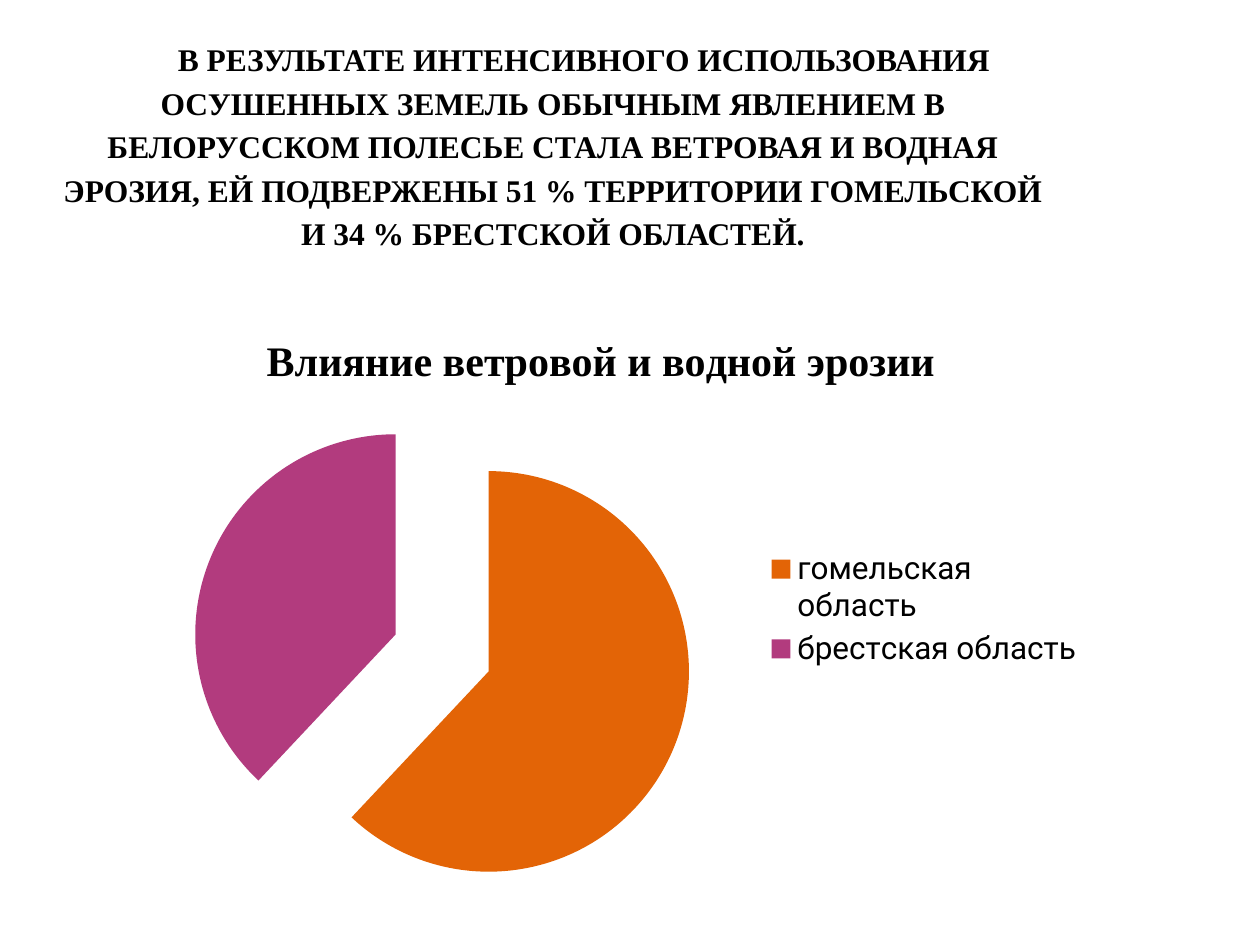
from lxml.etree import SubElement
from pptx import Presentation
from pptx.chart.data import CategoryChartData
from pptx.dml.color import RGBColor
from pptx.enum.chart import XL_CHART_TYPE, XL_LEGEND_POSITION
from pptx.enum.text import MSO_ANCHOR, MSO_AUTO_SIZE, PP_ALIGN
from pptx.oxml.ns import qn
from pptx.util import Emu, Pt

HEADING = (
    "В РЕЗУЛЬТАТЕ ИНТЕНСИВНОГО ИСПОЛЬЗОВАНИЯ ОСУШЕННЫХ ЗЕМЕЛЬ ОБЫЧНЫМ "
    "ЯВЛЕНИЕМ В БЕЛОРУССКОМ ПОЛЕСЬЕ СТАЛА ВЕТРОВАЯ И ВОДНАЯ ЭРОЗИЯ, "
    "ЕЙ ПОДВЕРЖЕНЫ 51 % ТЕРРИТОРИИ ГОМЕЛЬСКОЙ И 34 % БРЕСТСКОЙ ОБЛАСТЕЙ."
)
CHART_TITLE = "Влияние ветровой и водной эрозии"
REGIONS = [
    ("гомельская область", 62, "E36406"),
    ("брестская область", 38, "B23B7E"),
]
SERIF, SANS = "Times New Roman", "Roboto"


def px(length):
    return Emu(round(length * 914400 / 126))


def color(value):
    return RGBColor.from_string(value)


def style_font(font, name, size, bold=False):
    font.name = name
    font.size = Pt(size)
    font.bold = bold
    font.color.rgb = color("000000")


def write_text(frame, text, name=SERIF, size=18, bold=True, spacing=None, indent=0):
    paragraph = frame.paragraphs[0]
    paragraph.alignment = PP_ALIGN.CENTER
    paragraph.line_spacing = spacing
    if indent:
        properties = paragraph._p.get_or_add_pPr()
        properties.set("marL", "0")
        properties.set("indent", str(px(indent)))
    run = paragraph.add_run()
    run.text = text
    style_font(run.font, name, size, bold)


def set_layout(parent, position, **fractions):
    """Place a chart part by fractions of the chart's own box."""
    for old in parent.findall(qn("c:layout")):
        parent.remove(old)
    layout = SubElement(parent, qn("c:layout"))
    parent.insert(position, layout)
    manual = SubElement(layout, qn("c:manualLayout"))
    if "w" in fractions:
        SubElement(manual, qn("c:layoutTarget")).set("val", "inner")
    for axis in "xy":
        SubElement(manual, qn(f"c:{axis}Mode")).set("val", "edge")
    for key, value in fractions.items():
        SubElement(manual, qn(f"c:{key}")).set("val", str(value))


def add_heading(slide, left, top, width, height):
    heading = slide.shapes.title
    heading.left, heading.top = px(left), px(top)
    heading.width, heading.height = px(width), px(height)
    frame = heading.text_frame
    frame.word_wrap = True
    frame.auto_size = MSO_AUTO_SIZE.NONE
    frame.vertical_anchor = MSO_ANCHOR.BOTTOM
    frame.margin_left = frame.margin_right = px(6)
    frame.margin_top, frame.margin_bottom = 0, px(71)
    write_text(frame, HEADING, spacing=1.15, indent=62)


def add_erosion_pie(slide, left, top, width, height):
    data = CategoryChartData()
    data.categories = [region for region, _, _ in REGIONS]
    data.add_series(CHART_TITLE, [share for _, share, _ in REGIONS])
    chart = slide.shapes.add_chart(
        XL_CHART_TYPE.PIE, px(left), px(top), px(width), px(height), data
    ).chart
    style_font(chart.font, SANS, 18)

    # Chart title
    chart.has_title = True
    write_text(chart.chart_title.text_frame, CHART_TITLE, size=24)
    set_layout(chart.chart_title._element, 1, x=0.13, y=0.05)

    # Legend
    chart.has_legend = True
    chart.legend.position = XL_LEGEND_POSITION.RIGHT
    chart.legend.include_in_layout = False
    style_font(chart.legend.font, SANS, 18)

    # Slices, pulled apart
    plot = chart.plots[0]
    plot.vary_by_categories = True
    shares = plot.series[0]
    for index, (_, _, fill) in enumerate(REGIONS):
        slice_fill = shares.points[index].format.fill
        slice_fill.solid()
        slice_fill.fore_color.rgb = color(fill)
    explosion = SubElement(shares._element, qn("c:explosion"))
    explosion.set("val", "25")
    shares._element.find(qn("c:dPt")).addprevious(explosion)
    plot_area = chart._chartSpace.chart.plotArea
    set_layout(plot_area, 0, x=0.06, y=0.17, w=0.52, h=0.8)


def main():
    presentation = Presentation()
    presentation.slide_width, presentation.slide_height = px(1260), px(945)
    slide = presentation.slides.add_slide(presentation.slide_layouts[5])
    slide.background.fill.solid()
    slide.background.fill.fore_color.rgb = color("FFFFFF")
    add_heading(slide, 54, 165, 998, 158)
    add_erosion_pie(slide, 134, 294, 963, 630)
    presentation.save("out.pptx")


if __name__ == "__main__":
    main()
